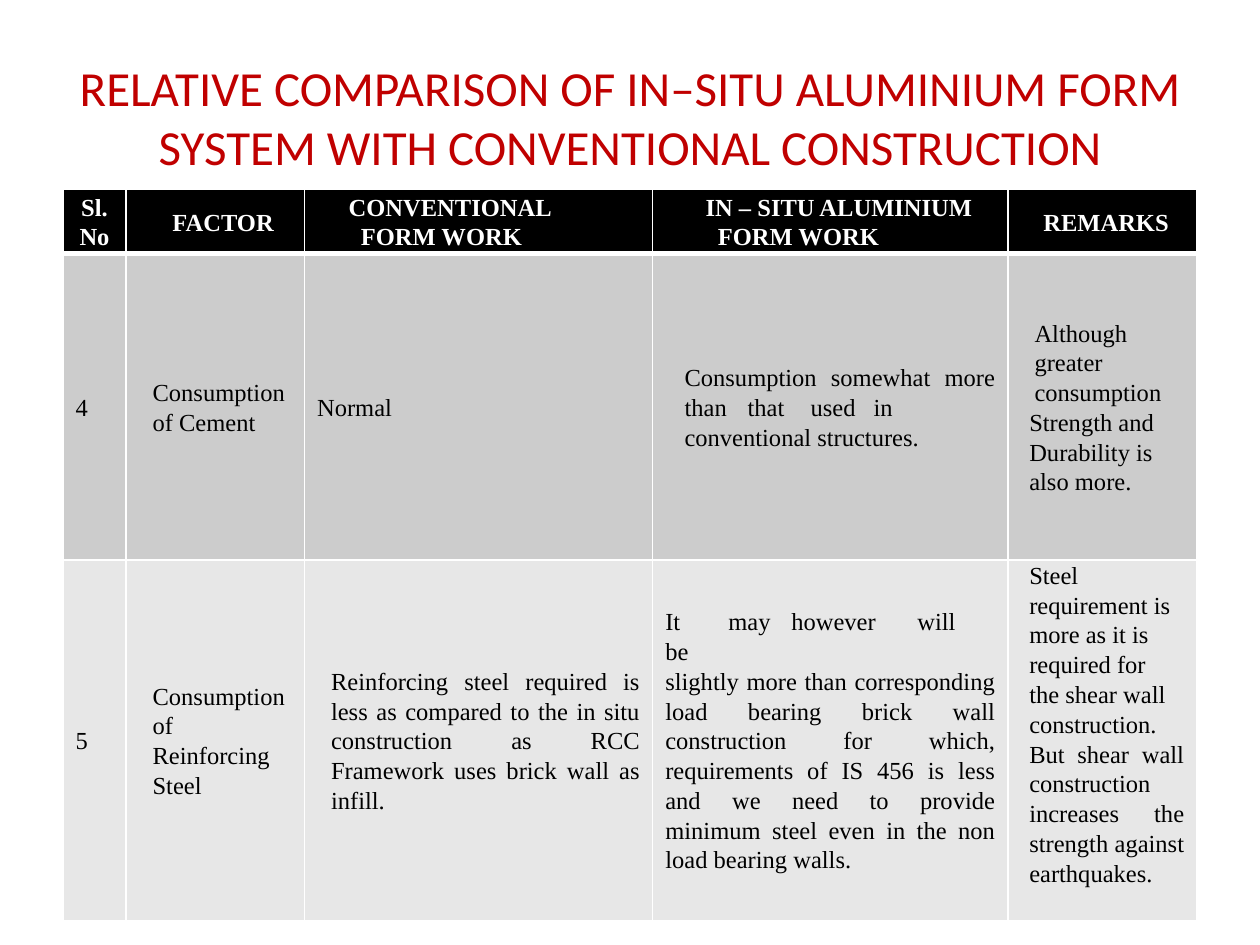
from pptx import Presentation
from pptx.util import Pt
from pptx.dml.color import RGBColor
from pptx.enum import text as t
from pptx.oxml import parse_xml
from pptx.oxml.ns import nsdecls

TITLE = ("RELATIVE COMPARISON OF IN–SITU ALUMINIUM FORM\v"
         "SYSTEM WITH CONVENTIONAL CONSTRUCTION")
MID, LEFT, JUST = t.PP_ALIGN.CENTER, t.PP_ALIGN.LEFT, t.PP_ALIGN.JUSTIFY
HEAD = [
    (MID, [(0, "Sl. No")]),
    (MID, [(9, "FACTOR")]),
    (LEFT, [(25, "CONVENTIONAL\vFORM WORK")]),
    (LEFT, [(30, "IN – SITU ALUMINIUM\vFORM WORK")]),
    (LEFT, [(13, "REMARKS")]),
]
BODY = [
    [
        [(0, "4")],
        [(8, "Consumption of Cement")],
        [(0, "Normal")],
        [(11, "Consumption somewhat more\vthan\tthat\tused\tin\v"
              "conventional structures.")],
        [(8, "Although greater consumption"), (5, "Strength and"),
         (5, "Durability is"), (5, "also more.")],
    ],
    [
        [(0, "5")],
        [(8, "Consumption of Reinforcing Steel")],
        [(8, "Reinforcing steel required is less as compared to the in situ "
             "construction as RCC Framework uses brick wall as infill.")],
        [(0, "It\tmay\thowever\twill\tbe\vslightly more than corresponding load "
             "bearing brick wall construction for which, requirements of IS 456 is "
             "less and we need to provide minimum steel even in the non load "
             "bearing walls.")],
        [(5, "Steel"), (5, "requirement is"), (5, "more as it is"),
         (5, "required for"), (5, "the shear wall"),
         (5, "construction.\vBut shear wall construction increases the strength "
             "against earthquakes.")],
    ],
]
ROWS = [HEAD] + [[(JUST, paras) for paras in row] for row in BODY]
STOPS = {(1, 3): [56, 109, 166], (2, 3): [27, 70, 134, 175]}
FILLS = ["000000", "CCCCCC", "E7E7E7"]
INKS = ["FFFFFF", "000000", "000000"]
WIDTHS = [36, 102, 199, 203, 108]
HEIGHTS = [33, 175, 206]
HANG = 7


def color(code):
    return RGBColor.from_string(code)


def style(item, **attrs):
    for name, value in attrs.items():
        setattr(item, name, value)


def write(para, words, size, face, ink, bold=False):
    para.text = words
    for part in [para, *para.runs]:
        style(part.font, size=Pt(size), name=face, bold=bold)
        part.font.color.rgb = color(ink)


def fill(cell, align, paras, back, ink, bold):
    cell.fill.solid()
    cell.fill.fore_color.rgb = color(back)
    style(cell, margin_left=Pt(7.2), margin_right=Pt(7.2), margin_top=0,
          margin_bottom=0, vertical_anchor=t.MSO_ANCHOR.MIDDLE)
    frame = cell.text_frame
    for i, (indent, words) in enumerate(paras):
        para = frame.add_paragraph() if i else frame.paragraphs[0]
        write(para, words, 14, "Times New Roman", ink, bold)
        style(para, alignment=align, line_spacing=1.1)
        props = para._p.get_or_add_pPr()
        props.set("marL", str(Pt(indent)))
        hang = HANG if bold and "\v" in words else 0
        props.set("indent", str(-Pt(hang)))


def rule(cell):
    cell._tc.get_or_add_tcPr().insert(0, parse_xml(
        f'<a:lnB {nsdecls("a")} w="{Pt(3)}"><a:solidFill>'
        '<a:srgbClr val="FFFFFF"/></a:solidFill></a:lnB>'))


def tabs(cell, stops):
    marks = "".join(f'<a:tab pos="{Pt(stop)}" algn="l"/>' for stop in stops)
    props = cell.text_frame.paragraphs[0]._p.get_or_add_pPr()
    node = parse_xml(f'<a:tabLst {nsdecls("a")}>{marks}</a:tabLst>')
    props.find("{*}defRPr").addprevious(node)


def main():
    deck = Presentation()
    style(deck, slide_width=Pt(720), slide_height=Pt(540))
    slide = deck.slides.add_slide(deck.slide_layouts[6])

    frame = slide.shapes.add_textbox(Pt(36), Pt(21.6), Pt(648), Pt(90)).text_frame
    style(frame, word_wrap=True, vertical_anchor=t.MSO_ANCHOR.MIDDLE)
    title = frame.paragraphs[0]
    write(title, TITLE, 28, "Calibri", "C00000")
    title.alignment = MID

    grid = slide.shapes.add_table(len(ROWS), len(WIDTHS), Pt(36), Pt(108),
                                  Pt(sum(WIDTHS)), Pt(sum(HEIGHTS))).table
    for col, width in zip(grid.columns, WIDTHS):
        col.width = Pt(width)
    for r, row in enumerate(ROWS):
        grid.rows[r].height = Pt(HEIGHTS[r])
        for c, (align, paras) in enumerate(row):
            fill(grid.cell(r, c), align, paras, FILLS[r], INKS[r], r == 0)
    for cell in grid.rows[0].cells:
        rule(cell)
    for place, stops in STOPS.items():
        tabs(grid.cell(*place), stops)
    grid.cell(2, 4).vertical_anchor = t.MSO_ANCHOR.TOP

    deck.save("out.pptx")


if __name__ == "__main__":
    main()
